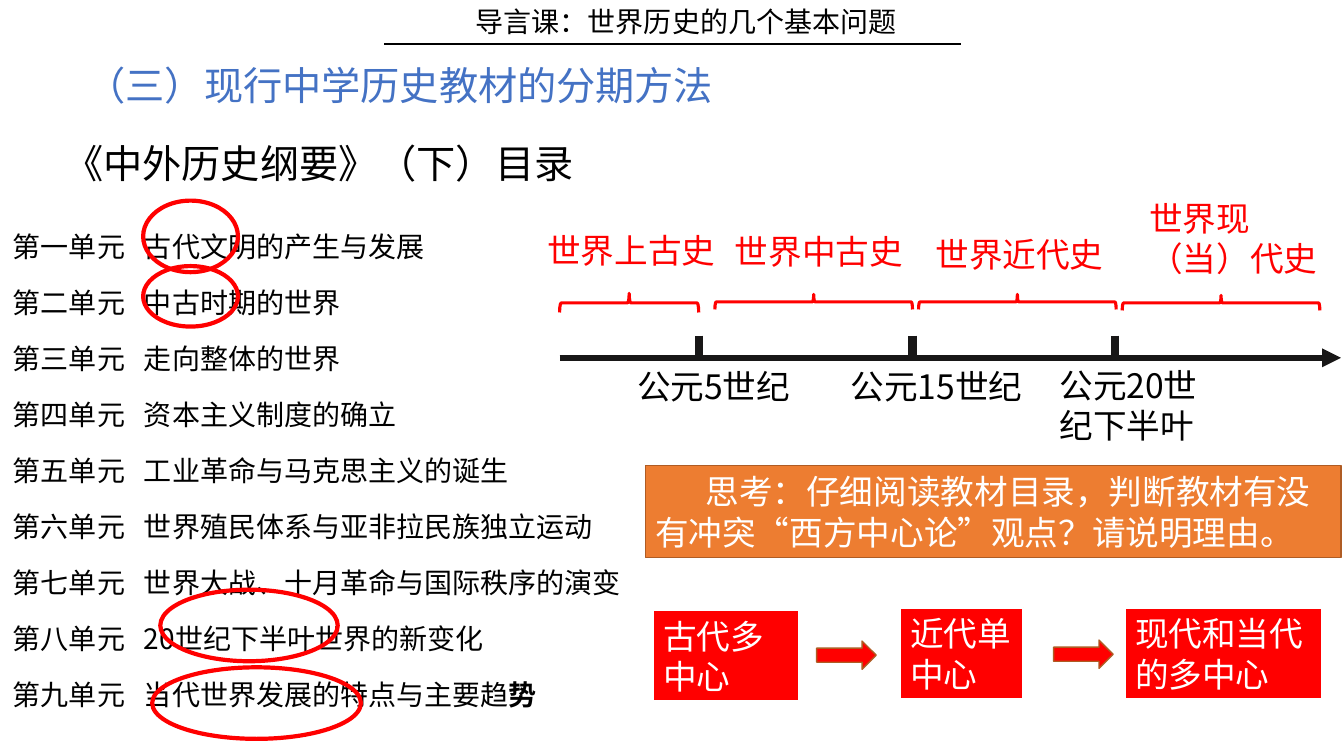
from lxml import etree
from pptx import Presentation
from pptx.dml.color import RGBColor
from pptx.enum.shapes import MSO_CONNECTOR, MSO_SHAPE
from pptx.enum.text import MSO_ANCHOR, PP_ALIGN
from pptx.oxml.ns import qn
from pptx.util import Inches, Pt

STRAIGHT = MSO_CONNECTOR.STRAIGHT
OVAL, RECTANGLE = MSO_SHAPE.OVAL, MSO_SHAPE.RECTANGLE
BRACE, ARROW = MSO_SHAPE.LEFT_BRACE, MSO_SHAPE.RIGHT_ARROW
TOP, MIDDLE, LEFT = MSO_ANCHOR.TOP, MSO_ANCHOR.MIDDLE, PP_ALIGN.LEFT
SC, JP = "Noto Sans CJK SC", "Noto Sans CJK JP"
BLACK, WHITE, RED, BLUE = "000000", "FFFFFF", "FF0000", "4472C4"
ORANGE, BROWN, AXIS = "ED7D31", "AF5C24", "181717"

HEADER = "导言课：世界历史的几个基本问题"
TITLE = "（三）现行中学历史教材的分期方法"
CONTENTS = "《中外历史纲要》（下）目录"
UNITS = [
    ("第一单元", "古代文明的产生与发展"),
    ("第二单元", "中古时期的世界"),
    ("第三单元", "走向整体的世界"),
    ("第四单元", "资本主义制度的确立"),
    ("第五单元", "工业革命与马克思主义的诞生"),
    ("第六单元", "世界殖民体系与亚非拉民族独立运动"),
    ("第七单元", "世界大战、十月革命与国际秩序的演变"),
    ("第八单元", "20世纪下半叶世界的新变化"),
    ("第九单元", "当代世界发展的特点与主要趋", "势"),
]
CIRCLES = [
    (1.42, 1.99, 0.94, 0.71),
    (1.42, 2.64, 0.94, 0.6),
    (1.59, 5.85, 1.76, 0.71),
    (1.51, 6.62, 2.07, 0.71),
]
ERAS = [
    ("世界上古史", (5.33, 2.23, 2.12, 0.5), (5.55, 2.91, 1.38, 0.19)),
    ("世界中古史", (7.19, 2.24, 2.12, 0.5), (7.09, 2.92, 1.96, 0.15)),
    ("世界近代史", (9.18, 2.27, 2.12, 0.5), (9.11, 2.92, 1.96, 0.15)),
    ("世界现（当）代史", (11.3, 1.91, 1.9, 0.91), (11.13, 2.93, 1.96, 0.15)),
]
DATES = [
    (6.93, "公元5世纪", (6.22, 3.58, 1.74, 0.5)),
    (9.05, "公元15世纪", (8.34, 3.58, 1.94, 0.5)),
    (11.06, "公元20世纪下半叶", (10.41, 3.57, 1.8, 0.91)),
]
QUESTION = "思考：仔细阅读教材目录，判断教材有没有冲突“西方中心论”观点？请说明理由。"
CENTRES = [
    ("古代多中心", (6.48, 6.05, 1.45, 0.91)),
    ("近代单中心", (8.93, 6.03, 1.22, 0.91)),
    ("现代和当代的多中心", (11.16, 6.03, 1.95, 0.91)),
]
STEPS = [(8.1, 6.36, 0.59, 0.28), (10.45, 6.35, 0.59, 0.28)]

deck = Presentation()
deck.slide_width, deck.slide_height = Inches(13.33), Inches(7.5)
page = deck.slides.add_slide(deck.slide_layouts[5])


def color(value):
    return RGBColor.from_string(value)


def add_span(para, text, size=24, font=SC, ink=BLACK, bold=False):
    span = para.add_run()
    span.text = text
    span.font.size, span.font.bold, span.font.name = Pt(size), bold, font
    span.font.color.rgb = color(ink)
    latin = span.font._element.find(qn("a:latin"))
    latin.addnext(latin.makeelement(qn("a:ea"), {"typeface": font}))


def write(box, text, anchor=TOP, indent=0, **style):
    frame = box.text_frame
    frame.word_wrap, frame.vertical_anchor = True, anchor
    para = frame.paragraphs[0]
    para.alignment = LEFT
    if indent:
        properties = para._p.get_or_add_pPr()
        properties.set("marL", "0")
        properties.set("indent", str(Inches(indent)))
    add_span(para, text, **style)


def add_text(text, place, **style):
    box = page.shapes.add_textbox(*map(Inches, place))
    write(box, text, **style)


def add_figure(kind, place, line, width, fill=None):
    figure = page.shapes.add_shape(kind, *map(Inches, place))
    figure.shadow.inherit = False
    if fill:
        figure.fill.solid()
        figure.fill.fore_color.rgb = color(fill)
    else:
        figure.fill.background()
    figure.line.color.rgb, figure.line.width = color(line), Pt(width)
    return figure


def add_line(start, end, ink, width, arrow=False):
    line = page.shapes.add_connector(STRAIGHT, *map(Inches, start + end))
    line.line.color.rgb, line.line.width = color(ink), Pt(width)
    if arrow:
        etree.SubElement(line.line._get_or_add_ln(), qn("a:tailEnd"), type="triangle")
    etree.SubElement(line._element.spPr, qn("a:effectLst"))


def add_brace(left, top, length, depth):
    upright = (left + (length - depth) / 2, top - (length - depth) / 2, depth, length)
    add_figure(BRACE, upright, RED, 2.25).rotation = 90


def add_units():
    box = page.shapes.add_textbox(*map(Inches, (0.03, 2.01, 6.63, 5.06)))
    frame = box.text_frame
    frame.word_wrap = True
    for index, (number, name, *strong) in enumerate(UNITS):
        para = frame.add_paragraph() if index else frame.paragraphs[0]
        para.line_spacing = Pt(40)
        tabs = etree.SubElement(para._p.get_or_add_pPr(), qn("a:tabLst"))
        etree.SubElement(tabs, qn("a:tab"), pos=str(Inches(1.3)), algn="l")
        add_span(para, f"{number}\t{name}", size=20)
        for text in strong:
            add_span(para, text, size=20, bold=True)


title = page.shapes.title
title.left, title.top, title.width, title.height = map(Inches, (0.76, 0.56, 6.51, 0.57))
write(title, TITLE, size=28, ink=BLUE)

add_line((3.81, 0.44), (9.53, 0.44), BLACK, 1.5)
add_text(HEADER, (4.62, 0, 4.63, 0.44), size=20)
add_units()
add_text(CONTENTS, (0.54, 1.33, 5.61, 0.57), size=28)
for place in CIRCLES:
    add_figure(OVAL, place, RED, 3)

add_line((5.55, 3.55), (13.3, 3.55), AXIS, 4.5, arrow=True)
for x, date, place in DATES:
    add_line((x, 3.33), (x, 3.52), AXIS, 6)
    add_text(date, place, font=JP)
for era, place, brace in ERAS:
    add_brace(*brace)
    add_text(era, place, ink=RED)

question = add_figure(RECTANGLE, (6.4, 4.62, 6.9, 0.91), BROWN, 1, ORANGE)
write(question, QUESTION, anchor=MIDDLE, indent=0.5, ink=WHITE)
for text, place in CENTRES:
    write(add_figure(RECTANGLE, place, WHITE, 1.5, RED), text, anchor=MIDDLE, ink=WHITE)
for place in STEPS:
    add_figure(ARROW, place, BROWN, 1, RED)

deck.save("out.pptx")
